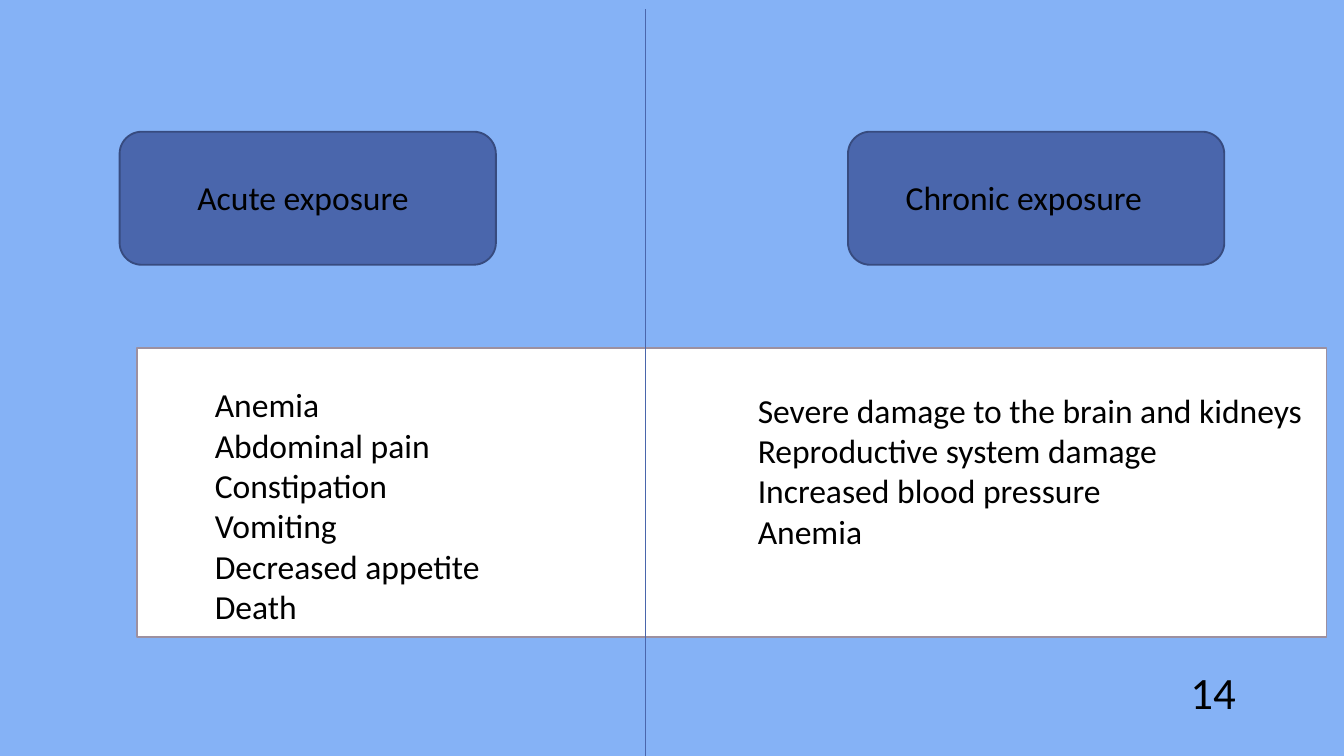
"""Build a slide comparing the effects of acute and chronic exposure."""
from lxml.etree import SubElement
from pptx import Presentation
from pptx.dml.color import RGBColor
from pptx.enum.shapes import MSO_CONNECTOR as Connector, MSO_SHAPE as Shape
from pptx.oxml.ns import qn
from pptx.util import Inches, Pt

SKY = RGBColor(0x85, 0xB2, 0xF6)
WHITE = RGBColor(0xFF, 0xFF, 0xFF)
BLACK = RGBColor(0x00, 0x00, 0x00)
BLUE = RGBColor(0x4A, 0x66, 0xAC)
NAVY = RGBColor(0x37, 0x4B, 0x7F)
MAUVE = RGBColor(0x9D, 0x90, 0xA0)

SLIDE_WIDTH = Inches(10)
SLIDE_HEIGHT = SLIDE_WIDTH * 9 // 16

COLUMNS = [
    {
        "heading": "Acute exposure",
        "button": (0.89, 0.98, 2.8, 0.99),
        "heading_at": (1.37, 1.27, 1.83, 0.4),
        "effects": ["Anemia", "Abdominal pain", "Constipation", "Vomiting",
                    "Decreased appetite", "Death"],
        "effects_at": (1.5, 2.81, 2.3, 1.92),
    },
    {
        "heading": "Chronic exposure",
        "button": (6.31, 0.98, 2.8, 0.99),
        "heading_at": (6.64, 1.27, 1.98, 0.4),
        "effects": ["Severe damage to the brain and kidneys",
                    "Reproductive system damage",
                    "Increased blood pressure", "Anemia"],
        "effects_at": (5.54, 2.85, 5, 1.31),
    },
]
PANEL_AT = (1.02, 2.59, 8.85, 2.15)
DIVIDER_LEFT, DIVIDER_TOP = Inches(4.8), Inches(0.07)
PAGE_NUMBER = "14"
PAGE_NUMBER_AT = (8.76, 4.9, 0.87, 0.5)


def add_panel(page, kind, place, fill, outline):
    panel = page.shapes.add_shape(kind, *map(Inches, place))
    panel.shadow.inherit = False
    panel.fill.solid()
    panel.fill.fore_color.rgb = fill
    panel.line.color.rgb = outline
    panel.line.width = Pt(1)


def add_text(page, lines, place, size=18, wrap=True):
    box = page.shapes.add_textbox(*map(Inches, place))
    frame = box.text_frame
    frame.word_wrap = wrap
    frame.text = "\n".join(lines)
    font_format = {"name": "Calibri", "size": Pt(size)}
    for para in frame.paragraphs:
        for span in para.runs:
            for key, value in font_format.items():
                setattr(span.font, key, value)
            span.font.color.rgb = BLACK


def add_divider(page):
    divider = page.shapes.add_connector(
        Connector.STRAIGHT, DIVIDER_LEFT, DIVIDER_TOP, DIVIDER_LEFT, SLIDE_HEIGHT)
    divider.line.color.rgb = BLUE
    divider.line.width = Pt(0.5)
    SubElement(divider._element.spPr, qn("a:effectLst"))


def main():
    deck = Presentation()
    deck.slide_width, deck.slide_height = SLIDE_WIDTH, SLIDE_HEIGHT
    page = deck.slides.add_slide(deck.slide_layouts[6])
    page.background.fill.solid()
    page.background.fill.fore_color.rgb = SKY

    add_panel(page, Shape.RECTANGLE, PANEL_AT, WHITE, MAUVE)
    add_divider(page)
    for column in COLUMNS:
        add_panel(page, Shape.ROUNDED_RECTANGLE, column["button"], BLUE, NAVY)
        add_text(page, [column["heading"]], column["heading_at"], wrap=False)
        add_text(page, column["effects"], column["effects_at"])
    add_text(page, [PAGE_NUMBER], PAGE_NUMBER_AT, size=24)
    deck.save("out.pptx")


if __name__ == "__main__":
    main()
